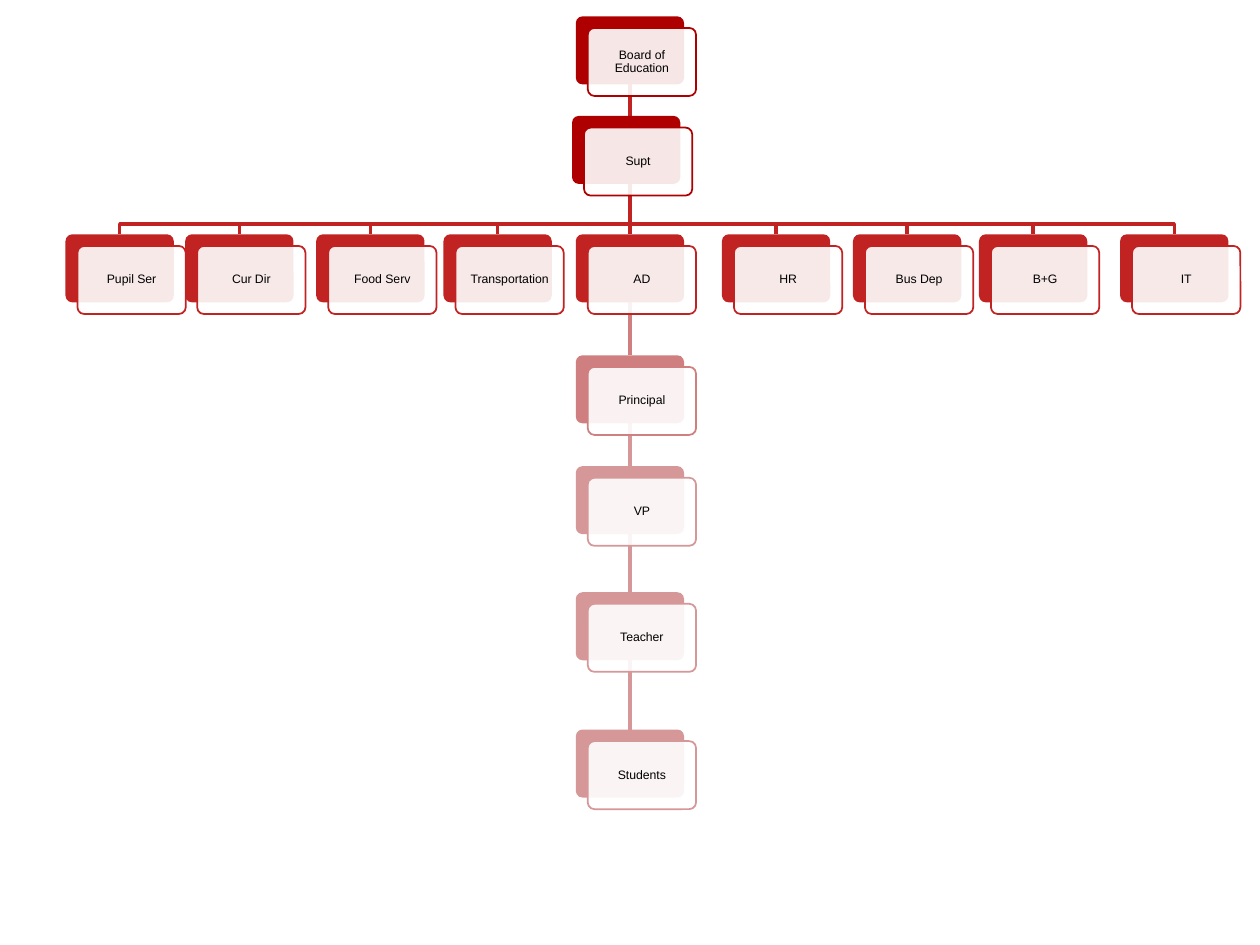
from lxml.etree import SubElement
from pptx import Presentation
from pptx.dml.color import RGBColor
from pptx.enum.shapes import MSO_CONNECTOR as CONN, MSO_SHAPE as SHAPE
from pptx.enum.text import MSO_ANCHOR as ANCHOR, PP_ALIGN as ALIGN
from pptx.oxml.ns import qn
from pptx.util import Inches, Pt

COLORS = {
    "top": "AE0000",
    "department": "C12222",
    "principal": "CF7F7F",
    "school": "D59797",
    "card": "FFFFFF",
    "text": "000000",
}

# Positions are percentages of the slide's width and height.
DEPARTMENT_ROW = 24.8
DEPARTMENTS = [
    ("Pupil Ser", 5.2), ("Cur Dir", 14.7), ("Food Serv", 25.1),
    ("Transportation", 35.2), ("AD", 45.7), ("HR", 57.3),
    ("Bus Dep", 67.7), ("B+G", 77.7), ("IT", 88.9),
]
LEADERS = [
    ("Board of Education", 45.7, 1.73, "top"),
    ("Supt", 45.4, 12.27, "top"),
]
SCHOOL = [
    ("Principal", 45.7, 37.6, "principal"),
    ("VP", 45.7, 49.33, "school"),
    ("Teacher", 45.7, 62.67, "school"),
    ("Students", 45.7, 77.2, "school"),
]
BOX_W, BOX_H = 8.6, 7.2
SHIFT_X, SHIFT_Y = 0.95, 1.23
BUS_ROW = 23.73

prs = Presentation()
prs.slide_width, prs.slide_height = Inches(10), Inches(7.5)
slide = prs.slides.add_slide(prs.slide_layouts[6])
shapes = slide.shapes


def across(share):
    return round(prs.slide_width * share / 100)


def down(share):
    return round(prs.slide_height * share / 100)


def rgb(name):
    return RGBColor.from_string(COLORS[name])


def add_panel(x, y, fill):
    sp = shapes.add_shape(SHAPE.ROUNDED_RECTANGLE, across(x), down(y),
                          across(BOX_W), down(BOX_H))
    sp.adjustments[0] = 0.1
    sp.shadow.inherit = False
    sp.fill.solid()
    sp.fill.fore_color.rgb = rgb(fill)
    return sp


def add_box(label, x, y, color):
    back = add_panel(x, y, color)
    back.line.fill.background()

    card = add_panel(x + SHIFT_X, y + SHIFT_Y, "card")
    srgb = card.fill._xPr.find(qn("a:solidFill"))[0]
    SubElement(srgb, qn("a:alpha")).set("val", "90000")
    card.line.color.rgb = rgb(color)
    card.line.width = Pt(1)

    tf = card.text_frame
    tf.word_wrap = True
    tf.vertical_anchor = ANCHOR.MIDDLE
    tf.margin_left = tf.margin_right = Inches(0.03)
    tf.margin_top = tf.margin_bottom = Inches(0.03)
    p = tf.paragraphs[0]
    p.text = label
    p.alignment = ALIGN.CENTER
    p.line_spacing = 0.9
    p.font.size = Pt(7)
    p.font.name = "Arial"
    p.font.color.rgb = rgb("text")
    return back


def style_link(link, color):
    link.line.color.rgb = rgb(color)
    link.line.width = Pt(2)
    shapes._spTree.insert(2, link._element)


def link_down(upper, lower, color):
    link = shapes.add_connector(CONN.STRAIGHT, 0, 0, 0, 0)
    link.begin_connect(upper, 2)
    link.end_connect(lower, 0)
    SubElement(link._element.spPr, qn("a:effectLst"))
    style_link(link, color)


def link_elbow(upper, lower, color):
    x1 = upper.left + upper.width // 2
    x2 = lower.left + lower.width // 2
    bus = down(BUS_ROW)
    builder = shapes.build_freeform(x1, upper.top + upper.height)
    builder.add_line_segments([(x1, bus), (x2, bus), (x2, lower.top)], close=False)
    link = builder.convert_to_shape()
    link.fill.background()
    link.shadow.inherit = False
    style_link(link, color)


board = add_box(*LEADERS[0])
departments = {label: add_box(label, x, DEPARTMENT_ROW, "department")
               for label, x in DEPARTMENTS}
school = [add_box(*row) for row in SCHOOL]
add_box(*LEADERS[1])

for label, box in departments.items():
    link = link_down if label == "AD" else link_elbow
    link(board, box, "department")

chain = [departments["AD"], *school]
for upper, lower, row in zip(chain, school, SCHOOL):
    link_down(upper, lower, row[3])

prs.save("out.pptx")
